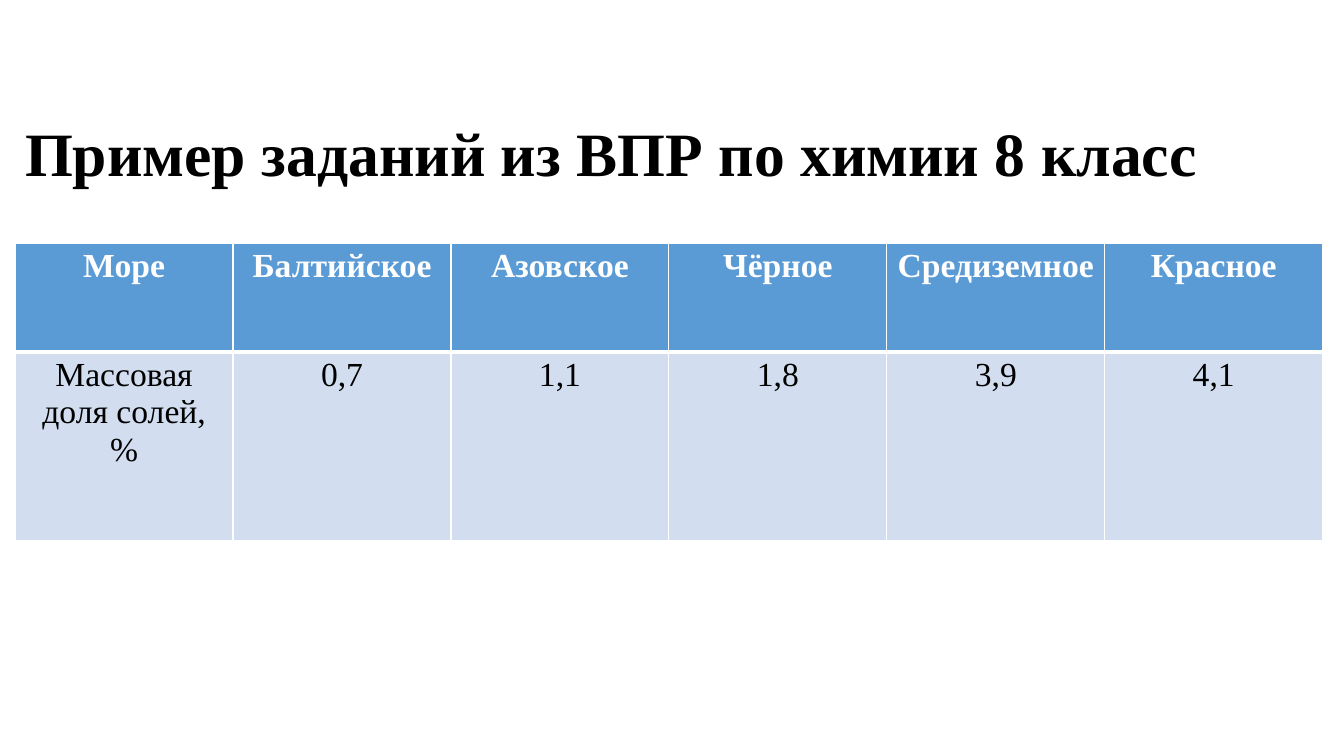
from lxml import etree
from pptx import Presentation
from pptx.dml.color import RGBColor
from pptx.enum.text import MSO_ANCHOR, PP_ALIGN
from pptx.oxml.ns import qn
from pptx.util import Inches, Pt

CENTER = PP_ALIGN.CENTER
MIDDLE = MSO_ANCHOR.MIDDLE

THEME = {
    "font": "Times New Roman",
    "title_size": 44,
    "cell_size": 24,
    "black": "000000",
    "white": "FFFFFF",
    "header_fill": "5B9BD5",
    "body_fill": "D2DEEF",
}
SEAS = [
    ("Море", "Массовая доля солей, %"),
    ("Балтийское", "0,7"),
    ("Азовское", "1,1"),
    ("Чёрное", "1,8"),
    ("Средиземное", "3,9"),
    ("Красное", "4,1"),
]
ROWS = [
    (1.08, THEME["header_fill"], THEME["white"], True, {"L": 1, "R": 1, "T": 1, "B": 3}),
    (1.87, THEME["body_fill"], THEME["black"], False, {"L": 1, "R": 1, "T": 3, "B": 1}),
]
LEFT, WIDTH = 0.15, 12.97


def add_run(p, text, size, color, bold):
    r = p.add_run()
    r.text = text
    r.font.name = THEME["font"]
    r.font.size = Pt(size)
    r.font.bold = bold
    r.font.color.rgb = RGBColor.from_string(color)


def set_borders(cell, widths):
    tc_pr = cell._tc.get_or_add_tcPr()
    for side, width in widths.items():
        ln = etree.SubElement(tc_pr, qn("a:ln" + side), w=str(Pt(width)))
        fill = etree.SubElement(ln, qn("a:solidFill"))
        etree.SubElement(fill, qn("a:srgbClr"), val=THEME["white"])


prs = Presentation()
prs.slide_width = Inches(13.33)
prs.slide_height = Inches(7.5)
s = prs.slides.add_slide(prs.slide_layouts[6])

sp = s.shapes.add_textbox(Inches(LEFT), Inches(0.83), Inches(WIDTH), Inches(1.45))
tf = sp.text_frame
tf.word_wrap = True
tf.vertical_anchor = MIDDLE
p = tf.paragraphs[0]
p.line_spacing = 0.9
add_run(p, "Пример заданий из ВПР по химии 8 класс", THEME["title_size"], THEME["black"], True)

height = sum(row[0] for row in ROWS)
table = s.shapes.add_table(
    len(ROWS), len(SEAS), Inches(LEFT), Inches(2.41), Inches(WIDTH), Inches(height)
).table
for col in table.columns:
    col.width = Inches(WIDTH / len(SEAS))

for i, (row_height, fill, color, bold, borders) in enumerate(ROWS):
    table.rows[i].height = Inches(row_height)
    for j, sea in enumerate(SEAS):
        cell = table.cell(i, j)
        set_borders(cell, borders)
        cell.fill.solid()
        cell.fill.fore_color.rgb = RGBColor.from_string(fill)
        p = cell.text_frame.paragraphs[0]
        p.alignment = CENTER
        add_run(p, sea[i], THEME["cell_size"], color, bold)

prs.save("out.pptx")
